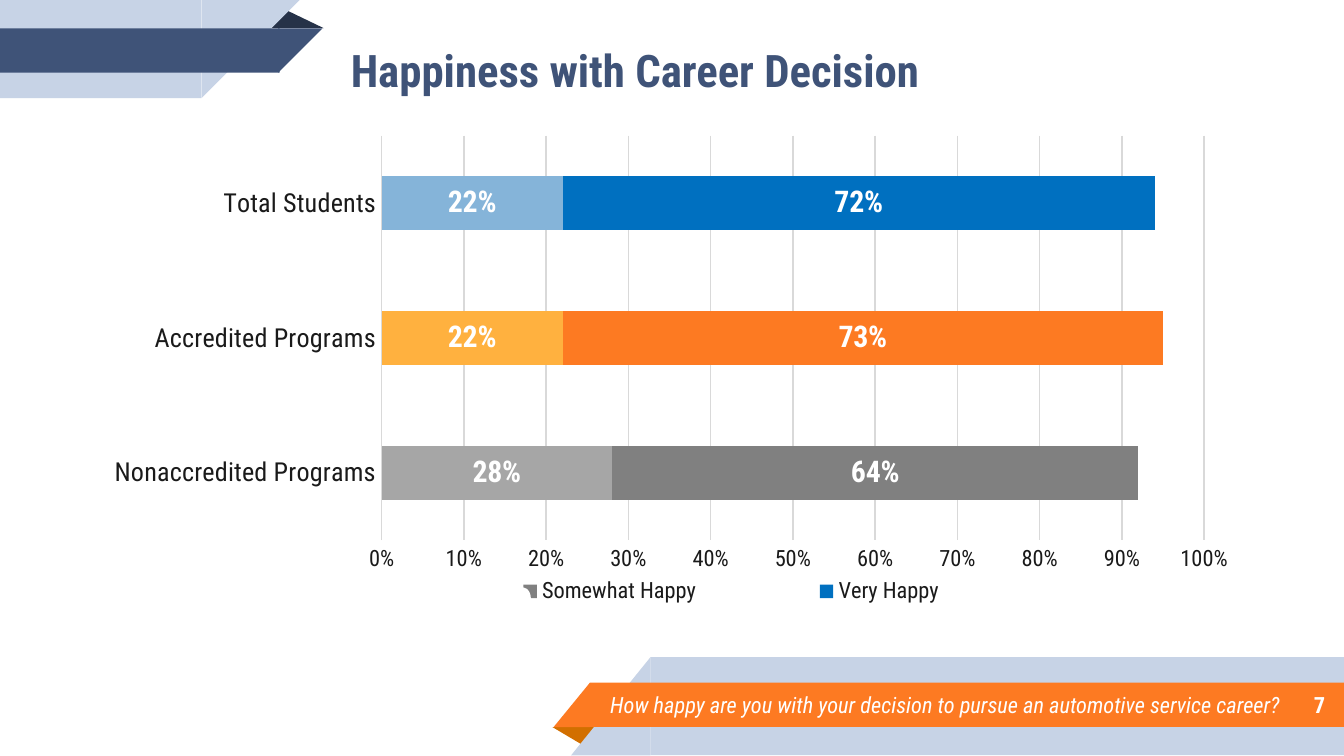
from lxml import etree
from pptx import Presentation, util as u
from pptx.chart.data import CategoryChartData
from pptx.dml.color import RGBColor
from pptx.enum import chart as ch, shapes, text
from pptx.oxml import parse_xml
from pptx.oxml.ns import qn

FONT = "Roboto Condensed"
NAVY, ORANGE, PALE, INK, GRID = "3F5378", "FD7A22", "C7D3E6", "1A1A1A", "D9D9D9"
TITLE = "Happiness with Career Decision"
QUESTION = "How happy are you with your decision to pursue an automotive service career?"
PAGE = "7"
CATEGORIES = ["Nonaccredited Programs", "Accredited Programs", "Total Students"]
SERIES = [
    ("Somewhat Happy", [0.28, 0.22, 0.22], "808080", ["A6A6A6", "FFB13F", "85B4D9"]),
    ("Very Happy", [0.64, 0.73, 0.72], "0070C0", ["808080", ORANGE]),
]
RECT, TRI, RT = "RECTANGLE", "ISOSCELES_TRIANGLE", "RIGHT_TRIANGLE"
RIBBONS = [
    (TRI, (4.11, 5.41, 0.35, 0.14), "D26F00", 180, False),
    (RECT, (4.84, 4.89, 5.17, 0.73), PALE, 0, True),
    (RT, (4.25, 4.89, 0.59, 0.73), PALE, 0, True),
    (RECT, (4.39, 5.08, 5.62, 0.33), ORANGE, 0, True),
    (RT, (4.12, 5.08, 0.27, 0.33), ORANGE, 0, True),
    (TRI, (1.98, 0.07, 0.43, 0.14), "263248", 0, False),
    (RECT, (0, 0, 1.5, 0.73), PALE, 180, True),
    (RT, (1.5, 0, 0.73, 0.73), PALE, 180, True),
    (RECT, (0, 0.21, 2.08, 0.33), NAVY, 180, True),
    (RT, (2.07, 0.21, 0.33, 0.33), NAVY, 180, True),
]
LEGEND_NOTCH = (3.83, 4.37, 0.12, 0.17)
CHART_BOX = (0.69, 0.94, 8.62, 3.75)
PLOT_BOX = (2.84, 1.01, 6.12, 3.01)
LEGEND_BOX = (3.03, 4.27, 4.82, 0.26)


def rgb(value):
    """Turn a hex string into a colour."""
    return RGBColor.from_string(value)


def inches(box):
    """Turn a box of numbers into lengths."""
    return [u.Inches(v) for v in box]


def style(font, color, **values):
    """Apply a colour and format values to a font."""
    for key, value in {"name": FONT, **values}.items():
        setattr(font, key, value)
    font.color.rgb = rgb(color)


def add_shape(slide, kind, box, color, rotation=0, flip=False):
    """Add a plain filled shape."""
    sp = slide.shapes.add_shape(getattr(shapes.MSO_SHAPE, kind), *inches(box))
    sp.shadow.inherit = False
    sp.fill.solid()
    sp.fill.fore_color.rgb = rgb(color)
    sp.line.fill.background()
    sp.rotation = rotation
    if flip:
        sp._element.spPr.xfrm.set("flipH", "1")
    if kind == TRI:
        sp.adjustments[0] = 0.324


def write(sp, box, content, color, align=text.PP_ALIGN.LEFT, **values):
    """Place a text shape and fill it with one formatted paragraph."""
    sp.left, sp.top, sp.width, sp.height = inches(box)
    tf = sp.text_frame
    tf.text = content
    p = tf.paragraphs[0]
    pPr = p._p.get_or_add_pPr()
    pPr.set("marL", "0")
    pPr.set("indent", "0")
    etree.SubElement(pPr, qn("a:buNone"))
    p.alignment, p.space_before = align, u.Pt(0)
    frame = {"word_wrap": True, "auto_size": text.MSO_AUTO_SIZE.NONE,
             "vertical_anchor": text.MSO_ANCHOR.MIDDLE}
    frame.update({f"margin_{side}": u.Inches(0.1) for side in ("left", "top", "right", "bottom")})
    for key, value in frame.items():
        setattr(tf, key, value)
    style(p.runs[0].font, color, **values)


def layout(box, inner=False):
    """Make a manual layout from a slide box, as fractions of the chart."""
    x, y, w, h = CHART_BOX
    parts = {"x": (box[0] - x) / w, "y": (box[1] - y) / h, "w": box[2] / w, "h": box[3] / h}
    body = '<c:layoutTarget val="inner"/>' if inner else ""
    body += '<c:xMode val="edge"/><c:yMode val="edge"/>'
    body += "".join(f'<c:{k} val="{v:.4f}"/>' for k, v in parts.items())
    return parse_xml('<c:layout xmlns:c="http://schemas.openxmlformats.org/drawingml/2006/chart">'
                     f"<c:manualLayout>{body}</c:manualLayout></c:layout>")


def add_chart(slide):
    """Add the stacked bar chart."""
    data = CategoryChartData(number_format="0%")
    data.categories = CATEGORIES
    for name, values, *_ in SERIES:
        data.add_series(name, values)
    chart = slide.shapes.add_chart(ch.XL_CHART_TYPE.BAR_STACKED, *inches(CHART_BOX), data).chart
    style(chart.font, "000000", name="Arial", size=u.Pt(10))
    chart.has_title = False
    plot = chart.plots[0]
    plot.gap_width, plot.overlap, plot.vary_by_categories = 150, 100, False
    for series, (_, _, color, points) in zip(plot.series, SERIES):
        fills = [series.format.fill] + [series.points[i].format.fill for i in range(len(points))]
        for fill, value in zip(fills, [color] + points):
            fill.solid()
            fill.fore_color.rgb = rgb(value)
        labels = series.data_labels
        labels.show_value, labels.number_format, labels.number_format_is_linked = True, "0%", False
        style(labels.font, "FFFFFF", size=u.Pt(16), bold=True)

    cat, val = chart.category_axis, chart.value_axis
    for axis, size in ((cat, 14), (val, 12)):
        axis.major_tick_mark = axis.minor_tick_mark = ch.XL_TICK_MARK.NONE
        style(axis.tick_labels.font, INK, size=u.Pt(size))
    val.minimum_scale, val.maximum_scale, val.major_unit = 0, 1, 0.1
    val.tick_labels.number_format, val.tick_labels.number_format_is_linked = "0%", False
    val.format.line.fill.background()
    for line in (cat.format.line, val.major_gridlines.format.line):
        line.color.rgb = rgb(GRID)
        line.width = u.Pt(0.75)

    chart.has_legend = True
    legend = chart.legend
    legend.position, legend.include_in_layout = ch.XL_LEGEND_POSITION.BOTTOM, False
    style(legend.font, INK, size=u.Pt(12))
    area = chart._chartSpace.chart.plotArea
    for parent, index, part in ((area, 0, layout(PLOT_BOX, True)),
                                (legend._element, 1, layout(LEGEND_BOX))):
        for old in parent.findall(qn("c:layout")):
            parent.remove(old)
        parent.insert(index, part)


def main():
    """Build the slide and save it."""
    prs = Presentation()
    prs.slide_width = u.Inches(10)
    prs.slide_height = prs.slide_width * 9 // 16
    s = prs.slides.add_slide(prs.slide_layouts[1])
    title, body = s.placeholders
    for ribbon in RIBBONS:
        add_shape(s, *ribbon)
    for sp in (body, title):
        s.shapes._spTree.append(sp._element)
    write(body, (4.44, 5.07, 5.24, 0.35), QUESTION, "FFFFFF", size=u.Pt(12), italic=True)
    write(title, (2.51, 0.1, 6.48, 0.84), TITLE, NAVY, size=u.Pt(24), bold=True)
    box = (8.33, 5.07, 1.63, 0.35)
    write(s.shapes.add_textbox(*inches(box)), box, PAGE, "FFFFFF", text.PP_ALIGN.RIGHT,
          size=u.Pt(12), bold=True)
    add_chart(s)
    add_shape(s, "OVAL", LEGEND_NOTCH, "FFFFFF")
    prs.save("out.pptx")


if __name__ == "__main__":
    main()
